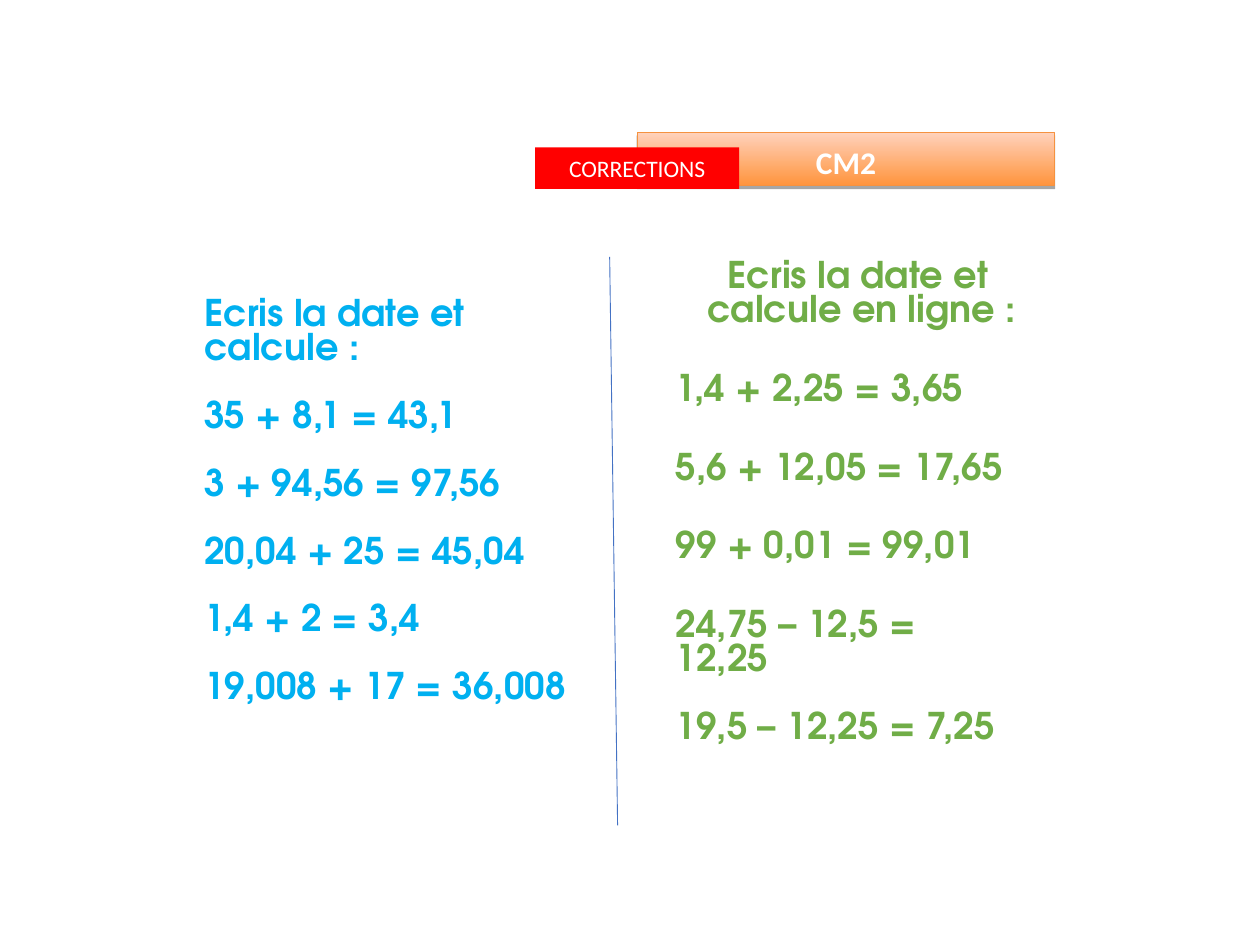
from lxml import etree
from pptx import Presentation
from pptx import util as u
from pptx.dml.color import RGBColor
from pptx.enum import shapes, text
from pptx.oxml.ns import qn

LINE_PITCH = u.Pt(19.4)
MATHS_FONT = "TeX Gyre Adventor"


def colour(value):
    return RGBColor.from_string(value)


def add_run(paragraph, wording, size, font, fill, bold=False):
    run = paragraph.add_run()
    run.text = wording
    run.font.size = u.Pt(size)
    run.font.name = font
    run.font.bold = bold
    run.font.color.rgb = colour(fill)


def set_insets(holder, bottom=0.1):
    holder.margin_left = holder.margin_right = u.Cm(0.18)
    holder.margin_top = u.Cm(0.1)
    holder.margin_bottom = u.Cm(bottom)


def add_drop_shadow(shape):
    effects = etree.SubElement(shape._element.spPr, qn("a:effectLst"))
    shadow = etree.SubElement(effects, qn("a:outerShdw"), blurRad="0",
                              dist=str(u.Pt(1.8)), dir="5400000", rotWithShape="0")
    black = etree.SubElement(shadow, qn("a:srgbClr"), val="000000")
    etree.SubElement(black, qn("a:alpha"), val="35000")


def add_level_banner(slide, left, top, width, height):
    """Orange level banner with the red label over its left end."""
    banner = slide.shapes.add_shape(shapes.MSO_SHAPE.RECTANGLE, u.Cm(left), u.Cm(top),
                                    u.Cm(width), u.Cm(height))
    banner.fill.gradient()
    banner.fill.gradient_angle = 90
    for stop, position, shade in zip(banner.fill.gradient_stops, (0, 1),
                                     ("FF943D", "FFD2BC")):
        stop.position = position
        stop.color.rgb = colour(shade)
    banner.line.color.rgb = colour("F59240")
    banner.line.width = u.Pt(0.75)
    add_drop_shadow(banner)
    level = banner.text_frame
    set_insets(level)
    level.word_wrap = True
    level.vertical_anchor = text.MSO_ANCHOR.BOTTOM
    level.paragraphs[0].alignment = text.PP_ALIGN.CENTER
    level.paragraphs[0].space_before = u.Pt(3.6)
    add_run(level.paragraphs[0], "CM2", 18, "Calibri", "FFFFFF", bold=True)

    # Red label
    label = slide.shapes.add_shape(shapes.MSO_SHAPE.RECTANGLE, u.Cm(left - 2.06),
                                   u.Cm(top + 0.3), u.Cm(4.11), u.Cm(0.84))
    label.shadow.inherit = False
    label.fill.solid()
    label.fill.fore_color.rgb = colour("FF0000")
    label.line.fill.background()
    label.text_frame.word_wrap = True
    label.text_frame.auto_size = text.MSO_AUTO_SIZE.SHAPE_TO_FIT_TEXT
    label.text_frame.paragraphs[0].alignment = text.PP_ALIGN.CENTER
    add_run(label.text_frame.paragraphs[0], "CORRECTIONS", 13.5, "Calibri", "FFFFFF")


def add_exercise(slide, left, top, width, height, fill, lines):
    """One-cell table; each line is (wording, space before in pt, indent in cm)."""
    table = slide.shapes.add_table(1, 1, u.Cm(left), u.Cm(top),
                                   u.Cm(width), u.Cm(height)).table
    table.first_row = table.horz_banding = False
    cell = table.cell(0, 0)
    cell.fill.background()
    cell.vertical_anchor = text.MSO_ANCHOR.MIDDLE
    set_insets(cell, bottom=0.79)  # one free line under the last sum
    frame = cell.text_frame
    for number, (wording, gap, indent) in enumerate(lines):
        paragraph = frame.add_paragraph() if number else frame.paragraphs[0]
        paragraph.line_spacing = LINE_PITCH
        paragraph.space_before = u.Pt(gap)
        if indent:
            paragraph._p.get_or_add_pPr().set("marL", str(u.Cm(indent)))
        add_run(paragraph, wording, 21, MATHS_FONT, fill, bold=True)


def add_divider(slide, start_x, start_y, end_x, end_y):
    """Thin line between the two exercises."""
    divider = slide.shapes.add_connector(shapes.MSO_CONNECTOR.STRAIGHT, u.Cm(start_x),
                                         u.Cm(start_y), u.Cm(end_x), u.Cm(end_y))
    divider.line.color.rgb = colour("4472C4")
    divider.line.width = u.Pt(0.5)
    etree.SubElement(divider._element.spPr, qn("a:effectLst"))


def main():
    deck = Presentation()
    deck.slide_width, deck.slide_height = u.Cm(25.4), u.Cm(19.05)
    slide = deck.slides.add_slide(deck.slide_layouts[6])

    add_divider(slide, 12.29, 5.18, 12.45, 16.64)

    # Left: sums
    sums = ["35 + 8,1 = 43,1", "3 + 94,56 = 97,56", "20,04 + 25 = 45,04",
            "1,4 + 2 = 3,4", "19,008 + 17 = 36,008"]
    add_exercise(slide, 3.94, 4.39, 7.98, 12.19, "00B0F0",
                 [("Ecris la date et calcule :", 0, 0)]
                 + [(item, 19.4, 0) for item in sums])

    # Right: sums and differences, with an indented two-line heading
    wide_gap = 25.7
    add_exercise(slide, 13.44, 4.72, 7.24, 11.56, "70AD47", [
        ("Ecris la date et", 0, 1.05),
        ("calcule en ligne :", 0, 0.64),
        ("1,4 + 2,25 = 3,65", wide_gap, 0),
        ("5,6 + 12,05 = 17,65", wide_gap, 0),
        ("99 + 0,01 = 99,01", wide_gap, 0),
        ("24,75 – 12,5 = 12,25", wide_gap, 0),
        ("19,5 – 12,25 = 7,25", 19.4, 0),
    ])

    add_level_banner(slide, 12.85, 2.67, 8.41, 1.07)
    deck.save("out.pptx")


if __name__ == "__main__":
    main()
